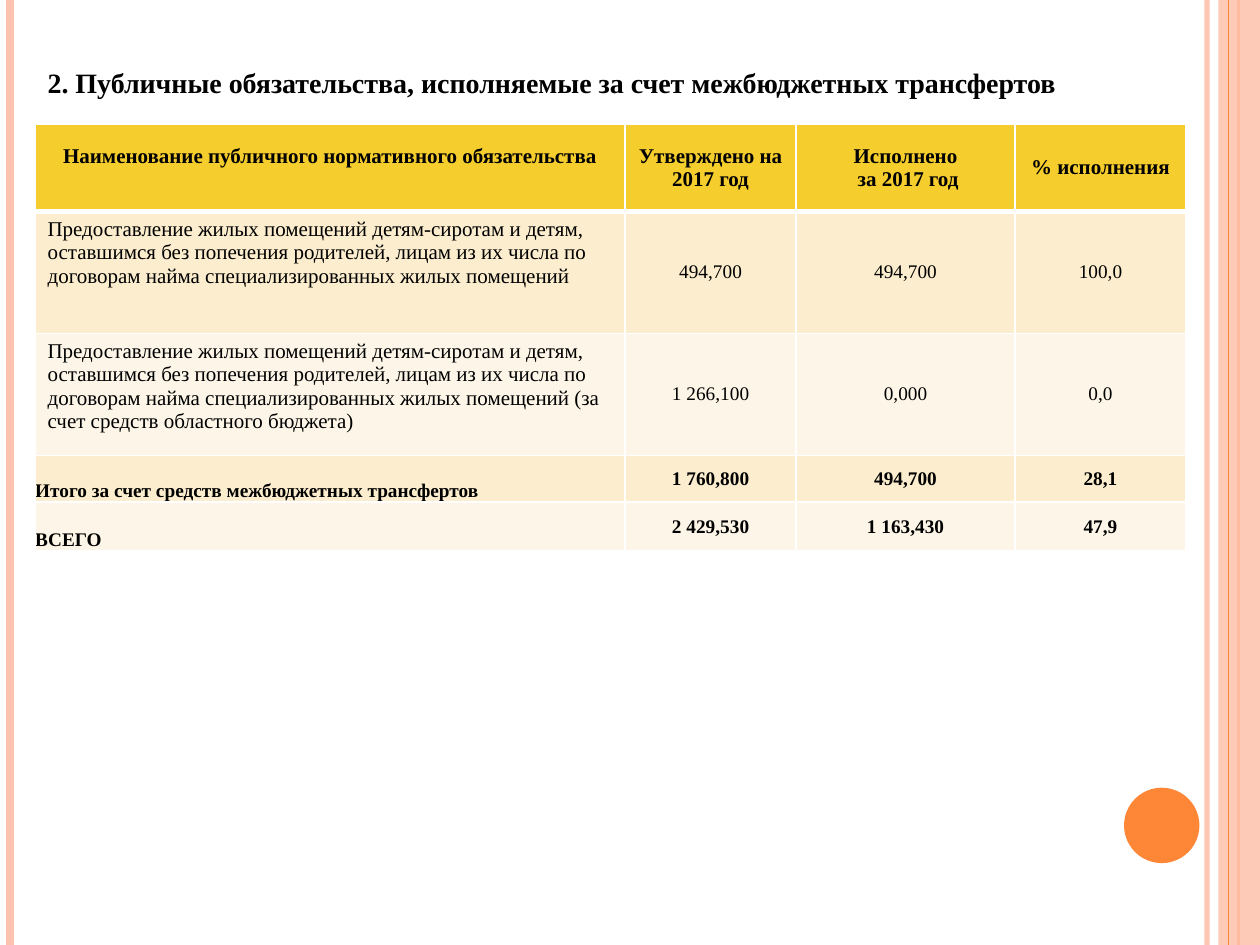
from lxml.etree import SubElement
from pptx import Presentation
from pptx.dml.color import RGBColor
from pptx.enum.shapes import MSO_CONNECTOR, MSO_SHAPE
from pptx.enum.text import MSO_ANCHOR, PP_ALIGN
from pptx.oxml.ns import qn
from pptx.util import Cm, Pt

BLACK = RGBColor(0, 0, 0)
WHITE = RGBColor(0xFF, 0xFF, 0xFF)
PINK = RGBColor(0xFE, 0xC3, 0xAE)
ORANGE = RGBColor(0xFE, 0x86, 0x37)
GOLD = RGBColor(0xF5, 0xCD, 0x2D)
CREAM = RGBColor(0xFB, 0xED, 0xCD)
PALE = RGBColor(0xFD, 0xF6, 0xE8)

WIDTH, HEIGHT = 25.4, 19.05
TITLE = "2. Публичные обязательства, исполняемые за счет межбюджетных трансфертов"
HOMES = ("Предоставление жилых помещений детям-сиротам и детям, оставшимся без "
         "попечения родителей, лицам из их числа по договорам найма "
         "специализированных жилых помещений")
ROWS = [
    ("Наименование публичного нормативного обязательства",
     "Утверждено на 2017 год", "Исполнено\n за 2017 год", "% исполнения"),
    (HOMES, "494,700", "494,700", "100,0"),
    (HOMES + " (за счет средств областного бюджета)", "1 266,100", "0,000", "0,0"),
    ("Итого за счет средств межбюджетных трансфертов", "1 760,800", "494,700", "28,1"),
    ("ВСЕГО", "2 429,530", "1 163,430", "47,9"),
]
COLS = [11.89, 3.45, 4.41, 3.45]
TALL = [1.75, 2.46, 2.46, 0.94, 0.99]
FILLS = [GOLD, CREAM, PALE, CREAM, PALE]

BACK = [(24.33, PINK, 3, 93), (0.2, PINK, 4.5, 100), (24.97, ORANGE, 1.5, 100)]
FRONT = [(24.77, ORANGE, 0.75, 100)]

PAD = {"margin_left": 0.25, "margin_right": 0.25, "margin_top": 0.13, "margin_bottom": 0.13}
SIDES = {"margin_left": 0.18, "margin_right": 0.18, "margin_top": 0, "margin_bottom": 0}
NONE = dict.fromkeys(PAD, 0)
HIGH = {**PAD, "margin_bottom": 0.61}


def apply(thing, style):
    for name, value in style.items():
        setattr(thing, name, value)


def write(frame, text, size, bold, align):
    frame.text = text
    for para in frame.paragraphs:
        para.alignment = align
        font = para.runs[0].font
        apply(font, {"name": "Times New Roman", "size": Pt(size), "bold": bold})
        font.color.rgb = BLACK


def fade(part, level):
    if level < 100:
        for color in part.iter(qn("a:srgbClr")):
            SubElement(color, qn("a:alpha"), val=str(level * 1000))


def add_bars(slide, bars):
    for x, color, width, level in bars:
        bar = slide.shapes.add_connector(
            MSO_CONNECTOR.STRAIGHT, Cm(x), Cm(0), Cm(x), Cm(HEIGHT))
        bar.line.color.rgb = color
        bar.line.width = Pt(width)
        fade(bar.line._get_or_add_ln(), level)
        SubElement(bar._element.spPr, qn("a:effectLst"))


def add_form(slide, kind, box, color, level=100):
    form = slide.shapes.add_shape(kind, *map(Cm, box))
    form.shadow.inherit = False
    form.fill.solid()
    form.fill.fore_color.rgb = color
    form.line.fill.background()
    fade(form._element.spPr, level)


def add_edges(cell, row):
    props = cell._tc.get_or_add_tcPr()
    wide = {"lnT": 3 if row == 1 else 1, "lnB": 3 if row == 0 else 1}
    for side in ("lnL", "lnR", "lnT", "lnB"):
        edge = SubElement(props, qn("a:" + side), w=str(Pt(wide.get(side, 1))))
        paint = SubElement(edge, qn("a:solidFill"))
        SubElement(paint, qn("a:srgbClr"), val=str(WHITE))


def cell_style(row, col):
    if row == 0:
        return (SIDES if col else HIGH), MSO_ANCHOR.MIDDLE
    if col:
        return NONE, MSO_ANCHOR.MIDDLE
    return (PAD, MSO_ANCHOR.TOP) if row < 3 else (NONE, MSO_ANCHOR.BOTTOM)


def add_grid(slide):
    grid = slide.shapes.add_table(
        len(ROWS), len(COLS), Cm(0.71), Cm(2.51), Cm(sum(COLS)), Cm(sum(TALL))).table
    for col, width in zip(grid.columns, COLS):
        col.width = Cm(width)
    for r, (texts, height) in enumerate(zip(ROWS, TALL)):
        grid.rows[r].height = Cm(height)
        for c, text in enumerate(texts):
            cell = grid.cell(r, c)
            pads, anchor = cell_style(r, c)
            apply(cell, {name: Cm(value) for name, value in pads.items()})
            cell.vertical_anchor = anchor
            add_edges(cell, r)
            cell.fill.solid()
            cell.fill.fore_color.rgb = FILLS[r]
            size = 12 if r == 0 or (c == 0 and r < 3) else 11
            align = PP_ALIGN.CENTER if r == 0 or c else PP_ALIGN.LEFT
            write(cell.text_frame, text, size, r not in (1, 2), align)


def main():
    deck = Presentation()
    apply(deck, {"slide_width": Cm(WIDTH), "slide_height": Cm(HEIGHT)})
    slide = deck.slides.add_slide(deck.slide_layouts[6])
    add_bars(slide, BACK)
    add_form(slide, MSO_SHAPE.RECTANGLE, (24.56, 0, 0.84, HEIGHT), PINK, 87)
    add_bars(slide, FRONT)
    add_form(slide, MSO_SHAPE.OVAL, (22.66, 15.88, 1.52, 1.52), ORANGE)
    title = slide.shapes.add_textbox(Cm(0.71), Cm(1.19), Cm(22.61), Cm(0.94)).text_frame
    title.word_wrap = True
    write(title, TITLE, 16, True, PP_ALIGN.LEFT)
    add_grid(slide)
    deck.save("out.pptx")


if __name__ == "__main__":
    main()
